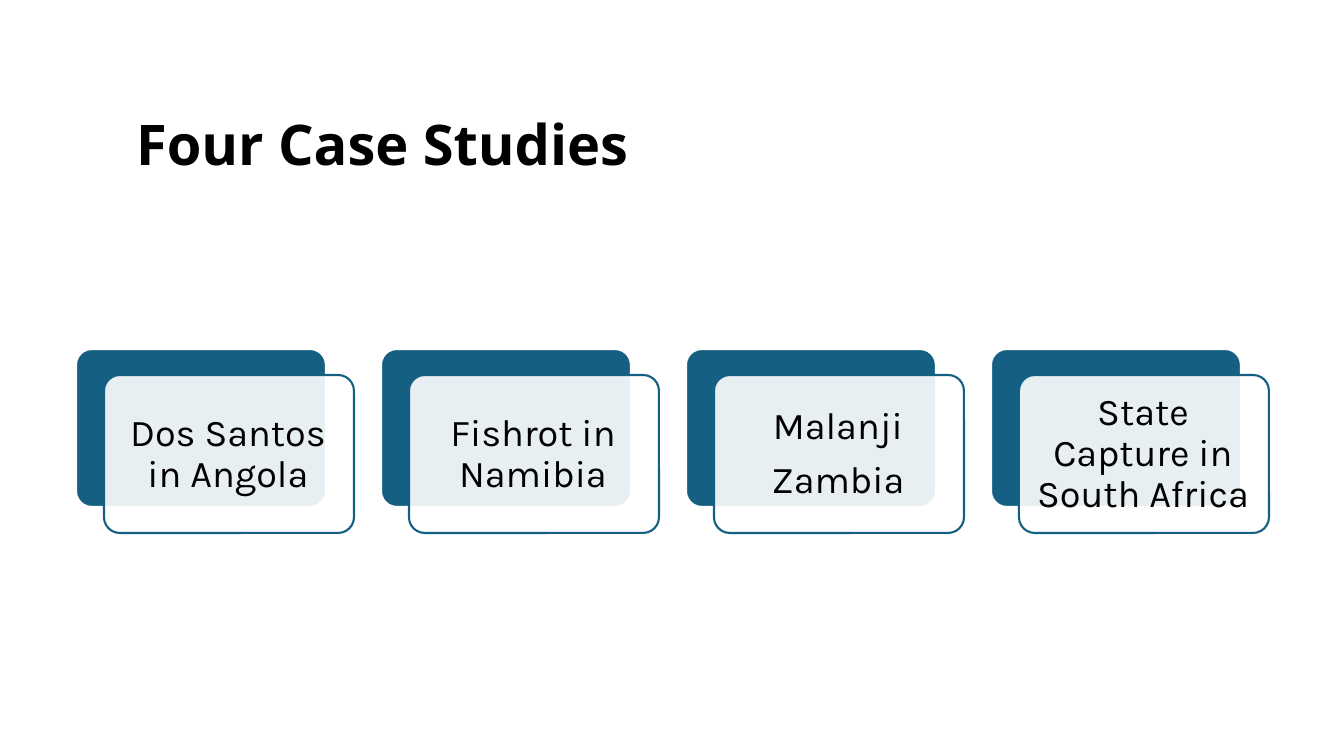
import dataclasses

import lxml.etree
import pptx
import pptx.dml.color
import pptx.enum.shapes
import pptx.enum.text
import pptx.oxml.ns
import pptx.util

SCALE = 914400 / 100.8  # EMU in one px
COLORS = {"blue": "156082", "white": "FFFFFF", "black": "000000"}
ALIGN = pptx.enum.text.PP_ALIGN


@dataclasses.dataclass(frozen=True)
class Box:
    left: int
    top: int
    width: int
    height: int

    def shift(self, step: int) -> "Box":
        return dataclasses.replace(self, left=self.left + step)

    def emu(self) -> list[int]:
        return [emu(side) for side in dataclasses.astuple(self)]


@dataclasses.dataclass(frozen=True)
class Case:
    lines: tuple[str, ...]


CASES = [
    Case(("Dos Santos in Angola",)),
    Case(("Fishrot in Namibia",)),
    Case(("Malanji", "Zambia")),
    Case(("State Capture in South Africa",)),
]
TITLE = Box(126, 109, 1092, 76)
BACK = Box(76, 349, 250, 158)
FRONT = Box(104, 375, 250, 158)
LABEL = Box(108, 380, 240, 149)
PITCH = 305
INSET = 11


def emu(px: int) -> int:
    return round(px * SCALE)


def color(name: str) -> pptx.dml.color.RGBColor:
    return pptx.dml.color.RGBColor.from_string(COLORS[name])


def write(frame, lines: tuple[str, ...], *, font: str, size: int,
          bold: bool = False, align=ALIGN.LEFT, after: float = 0) -> None:
    frame.word_wrap = True
    frame.auto_size = pptx.enum.text.MSO_AUTO_SIZE.NONE
    frame.vertical_anchor = pptx.enum.text.MSO_ANCHOR.MIDDLE
    for index, line in enumerate(lines):
        para = frame.add_paragraph() if index else frame.paragraphs[0]
        para.alignment = align
        para.line_spacing = 0.9
        para.space_before = pptx.util.Pt(0)
        para.space_after = pptx.util.Pt(after)
        run = para.add_run()
        run.text = line
        run.font.name = font
        run.font.size = pptx.util.Pt(size)
        run.font.bold = bold
        run.font.color.rgb = color("black")


def card(group, box: Box, *, fill: str, line: str, alpha: int = 100) -> None:
    kind = pptx.enum.shapes.MSO_SHAPE.ROUNDED_RECTANGLE
    shape = group.shapes.add_shape(kind, *box.emu())
    shape.adjustments[0] = 0.1
    shape.shadow.inherit = False
    shape.fill.solid()
    shape.fill.fore_color.rgb = color(fill)
    shape.line.color.rgb = color(line)
    shape.line.width = pptx.util.Pt(1.5)
    if alpha < 100:
        qn = pptx.oxml.ns.qn
        tint = shape.fill._xPr.find(qn("a:solidFill")).find(qn("a:srgbClr"))
        lxml.etree.SubElement(tint, qn("a:alpha"), val=str(alpha * 1000))


def label(group, box: Box, case: Case) -> None:
    frame = group.shapes.add_textbox(*box.emu()).text_frame
    frame.margin_left = frame.margin_right = emu(INSET)
    frame.margin_top = frame.margin_bottom = emu(INSET)
    write(frame, case.lines, font="Karla", size=27,
          align=ALIGN.CENTER, after=9.45)


def main() -> None:
    deck = pptx.Presentation()
    deck.slide_width, deck.slide_height = emu(1344), emu(756)
    slide = deck.slides.add_slide(deck.slide_layouts.get_by_name("Title Only"))
    slide.background.fill.solid()
    slide.background.fill.fore_color.rgb = color("white")

    # Title
    title = slide.shapes.title
    title.left, title.top, title.width, title.height = TITLE.emu()
    write(title.text_frame, ("Four Case Studies",),
          font="Open Sans", size=40, bold=True)

    # Row of case cards
    group = slide.shapes.add_group_shape()
    for index, case in enumerate(CASES):
        step = index * PITCH
        card(group, BACK.shift(step), fill="blue", line="white")
        card(group, FRONT.shift(step), fill="white", line="blue", alpha=90)
        label(group, LABEL.shift(step), case)

    deck.save("out.pptx")


if __name__ == "__main__":
    main()
